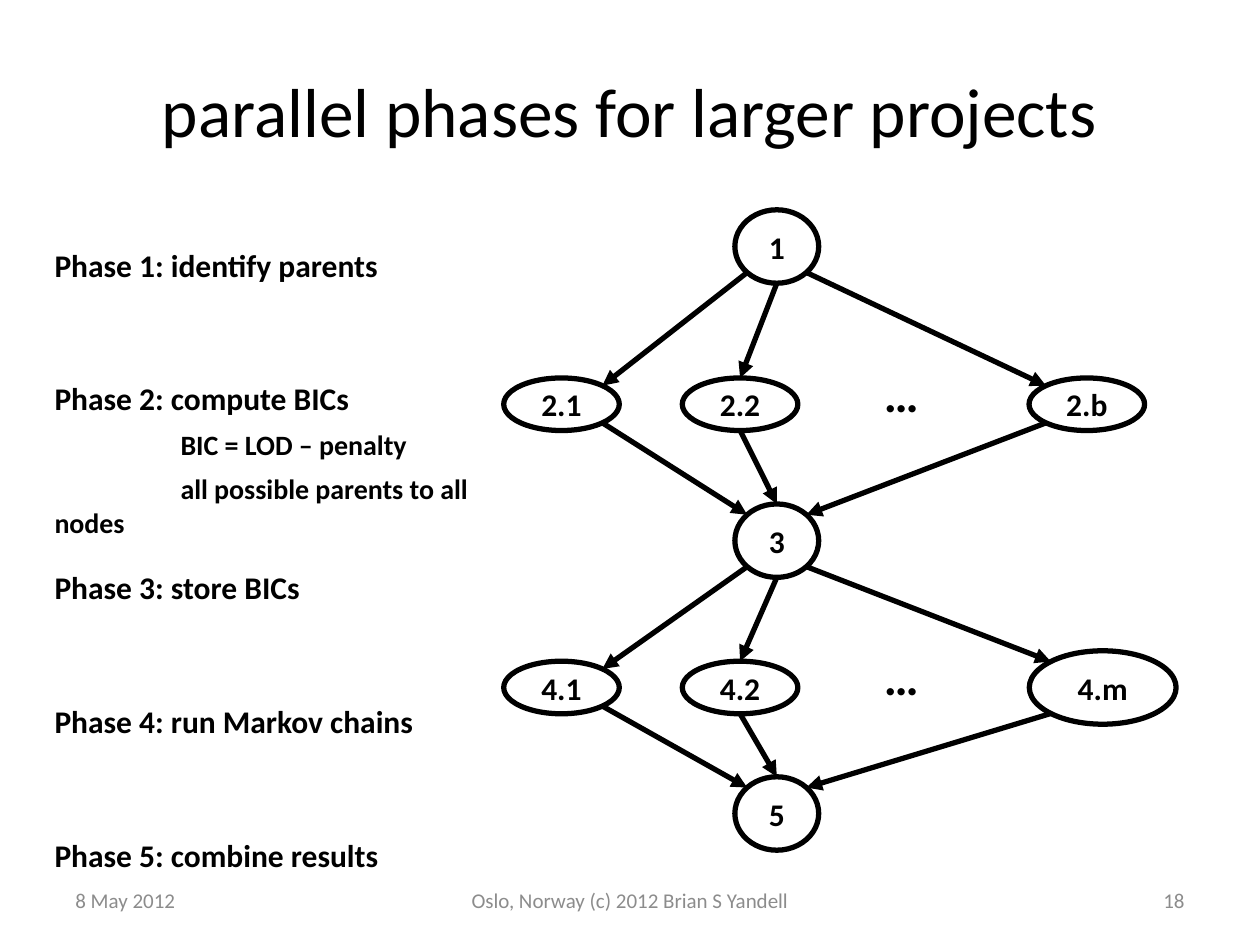
import pptx
import pptx.dml.color
import pptx.enum.shapes
import pptx.enum.text
import pptx.oxml
import pptx.oxml.ns
import pptx.util
import math

Cm = pptx.util.Cm
Pt = pptx.util.Pt
ALIGN = pptx.enum.text.PP_ALIGN
ANCHOR = pptx.enum.text.MSO_ANCHOR

BLACK = pptx.dml.color.RGBColor(0x00, 0x00, 0x00)
WHITE = pptx.dml.color.RGBColor(0xFF, 0xFF, 0xFF)
GREY = pptx.dml.color.RGBColor(0x8C, 0x8C, 0x8C)

HUB_X = 15.66
HUB_SIZE = (1.69, 1.48)
TASK_SIZE = (2.33, 1.06)
HUBS = [("1", 4.97), ("3", 10.9), ("5", 16.4)]
TASK_ROWS = [
    (8.15, [("2.1", 11.32, TASK_SIZE), ("2.2", 14.92, TASK_SIZE), ("2.b", 21.91, TASK_SIZE)]),
    (13.86, [("4.1", 11.32, TASK_SIZE), ("4.2", 14.92, TASK_SIZE), ("4.m", 22.23, (2.96, 1.48))]),
]
SIDES = (-1, 0, 1)

PHASE = {"line_spacing": 1.5, "space_before": Pt(6)}
SPACED_PHASE = {"line_spacing": 1.5, "space_before": Pt(44)}
DETAIL = {"line_spacing": 1.0, "space_before": Pt(6)}
PHASES = [
    ("Phase 1: identify parents", 18, PHASE, 0),
    ("Phase 2: compute BICs", 18, SPACED_PHASE, 0),
    ("BIC = LOD – penalty", 16, DETAIL, 2.54),
    ("all possible parents to all nodes", 16, DETAIL, 2.54),
    ("Phase 3: store BICs", 18, PHASE, 0),
    ("Phase 4: run Markov chains", 18, SPACED_PHASE, 0),
    ("Phase 5: combine results", 18, SPACED_PHASE, 0),
]


def apply_format(target, values):
    for name, value in values.items():
        setattr(target, name, value)


def write(paragraph, wording, size, color=BLACK, bold=False, layout=None):
    run = paragraph.add_run()
    run.text = wording
    apply_format(run.font, {"name": "Calibri", "size": Pt(size), "bold": bold})
    run.font.color.rgb = color
    apply_format(paragraph, layout or {})


def add_label(slide, box, wording, size, color=BLACK, bold=False,
              align=ALIGN.LEFT, anchor=ANCHOR.MIDDLE, wrap=True):
    label = slide.shapes.add_textbox(*map(Cm, box)).text_frame
    apply_format(label, {"word_wrap": wrap, "vertical_anchor": anchor})
    write(label.paragraphs[0], wording, size, color, bold, {"alignment": align})


def add_phases(slide):
    phases = slide.shapes.add_textbox(Cm(0.85), Cm(4.45), Cm(10.16), Cm(12.88)).text_frame
    phases.word_wrap = True
    for index, (wording, size, layout, indent) in enumerate(PHASES):
        paragraph = phases.add_paragraph() if index else phases.paragraphs[0]
        write(paragraph, wording, size, bold=True, layout=layout)
        if indent:
            paragraph._p.get_or_add_pPr().set("indent", str(Cm(indent)))


def add_node(slide, wording, x, y, size):
    width, height = size
    node = slide.shapes.add_shape(
        pptx.enum.shapes.MSO_SHAPE.OVAL,
        Cm(x - width / 2), Cm(y - height / 2), Cm(width), Cm(height))
    node.shadow.inherit = False
    node.fill.solid()
    node.fill.fore_color.rgb = WHITE
    node.line.color.rgb = BLACK
    node.line.width = Pt(3)
    apply_format(node.text_frame, {
        "margin_left": 0, "margin_right": 0, "margin_top": 0, "margin_bottom": 0,
        "word_wrap": False, "vertical_anchor": ANCHOR.MIDDLE})
    write(node.text_frame.paragraphs[0], wording, 18, bold=True,
          layout={"alignment": ALIGN.CENTER})
    return x, y, width, height


def rim_point(node, side, vertical):
    x, y, width, height = node
    reach = math.hypot(side, vertical)
    return Cm(x + side * width / 2 / reach), Cm(y + vertical * height / 2 / reach)


def add_arrow(slide, start, end):
    arrow = slide.shapes.add_connector(
        pptx.enum.shapes.MSO_CONNECTOR.STRAIGHT, *start, *end)
    arrow.line.color.rgb = BLACK
    arrow.line.width = Pt(3)
    head = pptx.oxml.parse_xml(
        f'<a:tailEnd {pptx.oxml.ns.nsdecls("a")} type="triangle"/>')
    arrow.line._get_or_add_ln().append(head)
    arrow._element.spPr.append(
        pptx.oxml.parse_xml(f'<a:effectLst {pptx.oxml.ns.nsdecls("a")}/>'))


def add_workflow(slide):
    hubs = [add_node(slide, name, HUB_X, y, HUB_SIZE) for name, y in HUBS]
    for (y, tasks), source, target in zip(TASK_ROWS, hubs, hubs[1:]):
        for side, (name, x, size) in zip(SIDES, tasks):
            task = add_node(slide, name, x, y, size)
            add_arrow(slide, rim_point(source, side, 1), rim_point(task, -side, -1))
            add_arrow(slide, rim_point(task, -side, 1), rim_point(target, side, -1))
        add_label(slide, (17.57, y - 0.95, 1.52, 1.45), "…", 28, bold=True,
                  anchor=ANCHOR.TOP, wrap=False)


def add_footer(slide):
    for left, width, wording, align in [
        (1.27, 5.93, "8 May 2012", ALIGN.LEFT),
        (8.68, 8.04, "Oslo, Norway (c) 2012 Brian S Yandell", ALIGN.CENTER),
        (18.2, 5.93, "18", ALIGN.RIGHT),
    ]:
        add_label(slide, (left, 17.65, width, 1.01), wording, 12, GREY, align=align)


def main():
    deck = pptx.Presentation()
    apply_format(deck, {"slide_width": Cm(25.4), "slide_height": Cm(19.05)})
    slide = deck.slides.add_slide(deck.slide_layouts[6])
    add_label(slide, (1.91, 1.27, 21.56, 1.9), "parallel phases for larger projects",
              39.6, align=ALIGN.CENTER)
    add_workflow(slide)
    add_phases(slide)
    add_footer(slide)
    deck.save("out.pptx")


if __name__ == "__main__":
    main()
